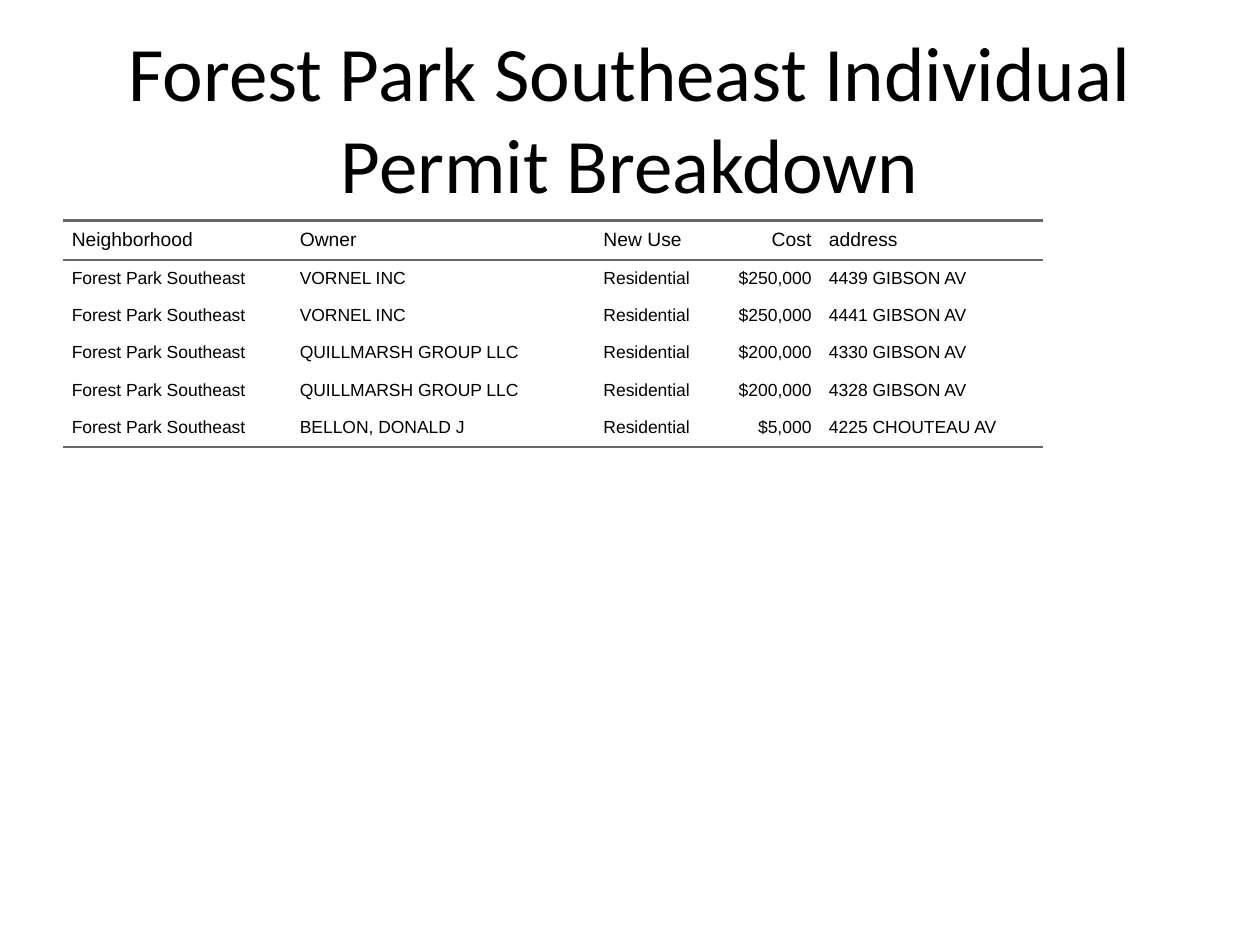
"""Build a slide with a title and a ruled table of individual building permits."""
import dataclasses

import pptx
import pptx.dml.color
import pptx.enum.text
import pptx.oxml
import pptx.oxml.ns
import pptx.util

SLIDE_WIDTH = pptx.util.Inches(10)
SLIDE_HEIGHT = pptx.util.Inches(7.5)
COLORS = {"text": "000000", "rule": "666666"}
ALIGN = pptx.enum.text.PP_ALIGN
MIDDLE = pptx.enum.text.MSO_ANCHOR.MIDDLE
PLAIN_STYLE = "{2D5ABB26-0587-4C30-8999-92F81FD0307C}"
RULE_WIDTH = pptx.util.Pt(1.5)
CELL_PADDING = pptx.util.Inches(0.07)
CELL_TOP_PADDING = pptx.util.Inches(0.06)
ROW_HEIGHT = pptx.util.Inches(0.25)


@dataclasses.dataclass(frozen=True)
class Area:
    left: float
    top: float
    width: float
    height: float

    def box(self) -> tuple[int, int, int, int]:
        return (
            round(self.left * SLIDE_WIDTH),
            round(self.top * SLIDE_HEIGHT),
            round(self.width * SLIDE_WIDTH),
            round(self.height * SLIDE_HEIGHT),
        )


@dataclasses.dataclass(frozen=True)
class Column:
    heading: str
    width: float
    align: ALIGN = ALIGN.LEFT


@dataclasses.dataclass(frozen=True)
class Permit:
    owner: str
    cost: int
    address: str
    neighborhood: str = "Forest Park Southeast"
    new_use: str = "Residential"

    def texts(self) -> list[str]:
        return [self.neighborhood, self.owner, self.new_use, f"${self.cost:,}", self.address]


TITLE = "Forest Park Southeast Individual Permit Breakdown"
TITLE_AREA = Area(0.05, 0.04, 0.9, 1 / 6)
TABLE_AREA = Area(0.05, 0.7 / 3, 0.9, 0.66)
COLUMNS = [
    Column("Neighborhood", 0.181),
    Column("Owner", 0.241),
    Column("New Use", 0.104),
    Column("Cost", 0.075, ALIGN.RIGHT),
    Column("address", 0.177),
]
PERMITS = [
    Permit("VORNEL INC", 250000, "4439 GIBSON AV"),
    Permit("VORNEL INC", 250000, "4441 GIBSON AV"),
    Permit("QUILLMARSH GROUP LLC", 200000, "4330 GIBSON AV"),
    Permit("QUILLMARSH GROUP LLC", 200000, "4328 GIBSON AV"),
    Permit("BELLON, DONALD J", 5000, "4225 CHOUTEAU AV"),
]


def write_text(text_frame, text: str, font_name: str, size: float, align: ALIGN) -> None:
    text_frame.text = text
    paragraph = text_frame.paragraphs[0]
    paragraph.alignment = align
    font = paragraph.runs[0].font
    font.name = font_name
    font.size = pptx.util.Pt(size)
    font.color.rgb = pptx.dml.color.RGBColor.from_string(COLORS["text"])


def add_title(slide) -> None:
    shape = slide.shapes.add_textbox(*TITLE_AREA.box())
    shape.text_frame.word_wrap = True
    shape.text_frame.vertical_anchor = MIDDLE
    write_text(shape.text_frame, TITLE, "Calibri", 44, ALIGN.CENTER)


def draw_rules(cell, sides: list[str]) -> None:
    properties = cell._tc.get_or_add_tcPr()
    for position, side in enumerate(sides):
        rule = pptx.oxml.parse_xml(
            f'<a:{side} {pptx.oxml.ns.nsdecls("a")} w="{RULE_WIDTH}"><a:solidFill>'
            f'<a:srgbClr val="{COLORS["rule"]}"/></a:solidFill></a:{side}>'
        )
        properties.insert(position, rule)


def fill_cell(cell, text: str, size: float, align: ALIGN, rules: list[str]) -> None:
    cell.margin_left = cell.margin_right = cell.margin_bottom = CELL_PADDING
    cell.margin_top = CELL_TOP_PADDING
    cell.vertical_anchor = MIDDLE
    cell.fill.background()
    write_text(cell.text_frame, text, "Arial", size, align)
    draw_rules(cell, rules)


def add_permit_table(slide) -> None:
    rows = [[column.heading for column in COLUMNS]] + [permit.texts() for permit in PERMITS]
    shape = slide.shapes.add_table(len(rows), len(COLUMNS), *TABLE_AREA.box())
    table = shape.table
    table.first_row = table.horz_banding = False
    table._tbl.tblPr.find(pptx.oxml.ns.qn("a:tableStyleId")).text = PLAIN_STYLE
    for table_column, column in zip(table.columns, COLUMNS):
        table_column.width = round(column.width * SLIDE_WIDTH)
    rules = {0: ["lnT", "lnB"], len(rows) - 1: ["lnB"]}
    for row_index, texts in enumerate(rows):
        table.rows[row_index].height = ROW_HEIGHT
        size = 11 if row_index == 0 else 10
        for column_index, (text, column) in enumerate(zip(texts, COLUMNS)):
            cell = table.cell(row_index, column_index)
            fill_cell(cell, text, size, column.align, rules.get(row_index, []))
    shape.left, shape.top, shape.width, shape.height = TABLE_AREA.box()


def main() -> None:
    presentation = pptx.Presentation()
    presentation.slide_width = SLIDE_WIDTH
    presentation.slide_height = SLIDE_HEIGHT
    slide = presentation.slides.add_slide(presentation.slide_layouts[6])
    add_title(slide)
    add_permit_table(slide)
    presentation.save("out.pptx")


if __name__ == "__main__":
    main()
